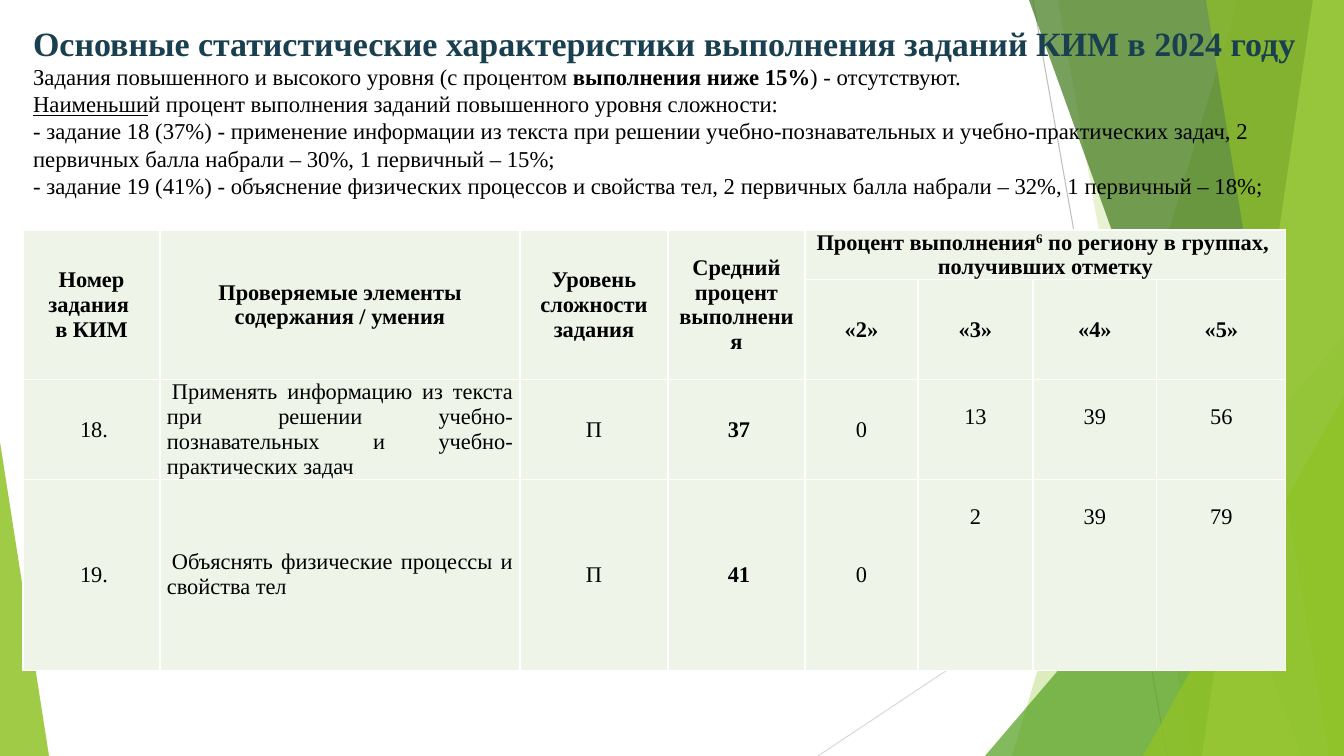
from lxml.etree import SubElement
from pptx import Presentation
from pptx.dml.color import RGBColor
from pptx.enum.shapes import MSO_CONNECTOR, MSO_SHAPE
from pptx.enum.text import MSO_ANCHOR, MSO_AUTO_SIZE, PP_ALIGN
from pptx.oxml.ns import qn
from pptx.util import Emu, Pt

PIXEL = 914400 / 100.8
WIDTH, HEIGHT = 1344, 756
FONT = "Times New Roman"
BLACK = RGBColor(0x00, 0x00, 0x00)
WHITE = RGBColor(0xFF, 0xFF, 0xFF)
NAVY = RGBColor(0x1A, 0x40, 0x50)
CELL_GREEN = RGBColor(0xEE, 0xF4, 0xE8)
LIME = RGBColor(0x90, 0xC2, 0x26)
GRASS = RGBColor(0x54, 0xA0, 0x21)
FOREST = RGBColor(0x3F, 0x78, 0x19)
PALE_LIME = RGBColor(0xC0, 0xE4, 0x74)
GREY = RGBColor(0xBF, 0xBF, 0xBF)
LIGHT_GREY = RGBColor(0xD9, 0xD9, 0xD9)

HEADING = "Основные статистические характеристики выполнения заданий КИМ в 2024 году"
RESULTS = (
    "й процент выполнения заданий повышенного уровня сложности:\n"
    "- задание 18 (37%) - применение информации из текста при решении учебно-познавательных "
    "и учебно-практических задач, 2 первичных балла набрали – 30%, 1 первичный – 15%;\n"
    "- задание 19 (41%) - объяснение физических процессов и свойства тел, "
    "2 первичных балла набрали – 32%, 1 первичный – 18%;"
)
COLUMN_WIDTHS = [137, 360, 148, 137, 113, 115, 124, 129]
ROW_HEIGHTS = [49, 100, 99, 191]
HEADERS = [
    "Номер\nзадания \nв КИМ",
    "Проверяемые элементы содержания / умения",
    "Уровень сложности задания",
    "Средний процент выполнения",
]
MARKS = ["«2»", "«3»", "«4»", "«5»"]
TASKS = [
    ["18.", "Применять информацию из текста при решении учебно-познавательных и "
            "учебно-практических задач", "П", "37", "0", "13", "39", "56"],
    ["19.", "Объяснять физические процессы и свойства тел", "П", "41", "0", "2", "39", "79"],
]
FIRST_LINE_INDENTS = [5, 5, -8, 5, 0, 0, 0, 0]


def px(length):
    return Emu(round(length * PIXEL))


def paint(shape, color, opacity):
    shape.shadow.inherit = False
    shape.fill.solid()
    shape.fill.fore_color.rgb = color
    shape.line.fill.background()
    color_element = shape.fill._xPr.find(qn("a:solidFill"))[0]
    SubElement(color_element, qn("a:alpha")).set("val", str(opacity * 1000))


def add_panel(slide, top_x, bottom_x, color, opacity):
    builder = slide.shapes.build_freeform(top_x, 0, scale=PIXEL)
    builder.add_line_segments([(WIDTH, 0), (WIDTH, HEIGHT), (bottom_x, HEIGHT)])
    paint(builder.convert_to_shape(), color, opacity)


def add_corner(slide, left, top, width, apex, color, opacity):
    shape = slide.shapes.add_shape(
        MSO_SHAPE.ISOSCELES_TRIANGLE, px(left), px(top), px(width), px(HEIGHT - top))
    shape.adjustments[0] = apex
    paint(shape, color, opacity)


def add_thin_line(slide, start, end, color):
    line = slide.shapes.add_connector(
        MSO_CONNECTOR.STRAIGHT, *map(px, start), *map(px, end))
    line.line.color.rgb = color
    line.line.width = Pt(0.75)
    SubElement(line._element.spPr, qn("a:effectLst"))


def add_run(paragraph, text, size, color=BLACK, bold=False, underline=False, baseline=0):
    for index, part in enumerate(text.split("\n")):
        if index:
            paragraph.add_line_break()
        if not part:
            continue
        run = paragraph.add_run()
        run.text = part
        run.font.name = FONT
        run.font.size = Pt(size)
        run.font.bold = bold
        run.font.underline = underline
        run.font.color.rgb = color
        if baseline:
            run.font._element.set("baseline", str(baseline * 1000))


def add_backdrop(slide):
    add_thin_line(slide, (1033, 0), (1167, HEIGHT), GREY)
    add_thin_line(slide, (WIDTH, 406), (818, HEIGHT), LIGHT_GREY)
    add_panel(slide, 1238, 1012, LIME, 30)
    add_panel(slide, 1058, 1192, LIME, 20)
    add_corner(slide, 985, 336, 359, 1, GRASS, 72)
    add_panel(slide, 1029, 1301, FOREST, 70)
    add_panel(slide, 1313, 1202, PALE_LIME, 70)
    add_panel(slide, 1206, 1329, LIME, 65)
    add_corner(slide, 1143, 396, 201, 1, LIME, 80)
    add_corner(slide, 0, 442, 49, 0, LIME, 85)


def fill_title(slide):
    title = slide.shapes.title
    title.element.getparent().append(title.element)
    title.left, title.top, title.width, title.height = map(px, (23, 17, 1320, 145))
    frame = title.text_frame
    frame.word_wrap = True
    frame.auto_size = MSO_AUTO_SIZE.NONE
    frame.vertical_anchor = MSO_ANCHOR.TOP
    paragraph = frame.paragraphs[0]
    paragraph.alignment = PP_ALIGN.LEFT
    add_run(paragraph, HEADING + "\n", 24.3, NAVY, bold=True)
    add_run(paragraph, "Задания повышенного и высокого уровня (с процентом ", 16.2)
    add_run(paragraph, "выполнения ниже 15%", 16.2, bold=True)
    add_run(paragraph, ") - отсутствуют.\n", 16.2)
    add_run(paragraph, "Наименьши", 16.2, underline=True)
    add_run(paragraph, RESULTS, 16.2)


def add_borders(cell):
    properties = cell._tc.get_or_add_tcPr()
    for index, side in enumerate(("a:lnL", "a:lnR", "a:lnT", "a:lnB")):
        border = properties.makeelement(qn(side), {"w": str(Pt(1))})
        fill = SubElement(border, qn("a:solidFill"))
        SubElement(fill, qn("a:srgbClr")).set("val", str(WHITE))
        properties.insert(index, border)


def style_cell(cell):
    cell.margin_left = cell.margin_right = px(7)
    cell.margin_top = cell.margin_bottom = 0
    cell.vertical_anchor = MSO_ANCHOR.MIDDLE
    cell.fill.solid()
    cell.fill.fore_color.rgb = CELL_GREEN
    add_borders(cell)


def write_cell(cell, text, bold=False, alignment=PP_ALIGN.CENTER, indent=0):
    paragraph = cell.text_frame.paragraphs[0]
    paragraph.alignment = alignment
    if indent:
        paragraph._p.get_or_add_pPr().set("indent", str(px(indent)))
    add_run(paragraph, text, 16, bold=bold)
    return paragraph


def add_results_table(slide):
    table = slide.shapes.add_table(
        len(ROW_HEIGHTS), len(COLUMN_WIDTHS), px(23), px(230),
        px(sum(COLUMN_WIDTHS)), px(sum(ROW_HEIGHTS))).table
    for column, width in zip(table.columns, COLUMN_WIDTHS):
        column.width = px(width)
    for row, height in zip(table.rows, ROW_HEIGHTS):
        row.height = px(height)
    for cell in table.iter_cells():
        style_cell(cell)
    for column, header in enumerate(HEADERS):
        table.cell(0, column).merge(table.cell(1, column))
        write_cell(table.cell(0, column), header, bold=True)
    table.cell(0, 4).merge(table.cell(0, 7))
    paragraph = write_cell(table.cell(0, 4), "Процент выполнения", bold=True)
    add_run(paragraph, "6", 16, bold=True, baseline=30)
    add_run(paragraph, " по региону в группах, \nполучивших отметку", 16, bold=True)
    for column, mark in enumerate(MARKS, start=4):
        write_cell(table.cell(1, column), mark, bold=True)
    for row, task in enumerate(TASKS, start=2):
        for column, text in enumerate(task):
            cell = table.cell(row, column)
            alignment = PP_ALIGN.JUSTIFY if column == 1 else PP_ALIGN.CENTER
            write_cell(cell, text, column == 3, alignment, FIRST_LINE_INDENTS[column])
            if column > 4:
                cell.vertical_anchor = MSO_ANCHOR.TOP
                cell.margin_top = px(25)


def main():
    presentation = Presentation()
    presentation.slide_width = px(WIDTH)
    presentation.slide_height = px(HEIGHT)
    slide = presentation.slides.add_slide(presentation.slide_layouts[5])
    add_backdrop(slide)
    fill_title(slide)
    add_results_table(slide)
    presentation.save("out.pptx")


if __name__ == "__main__":
    main()
